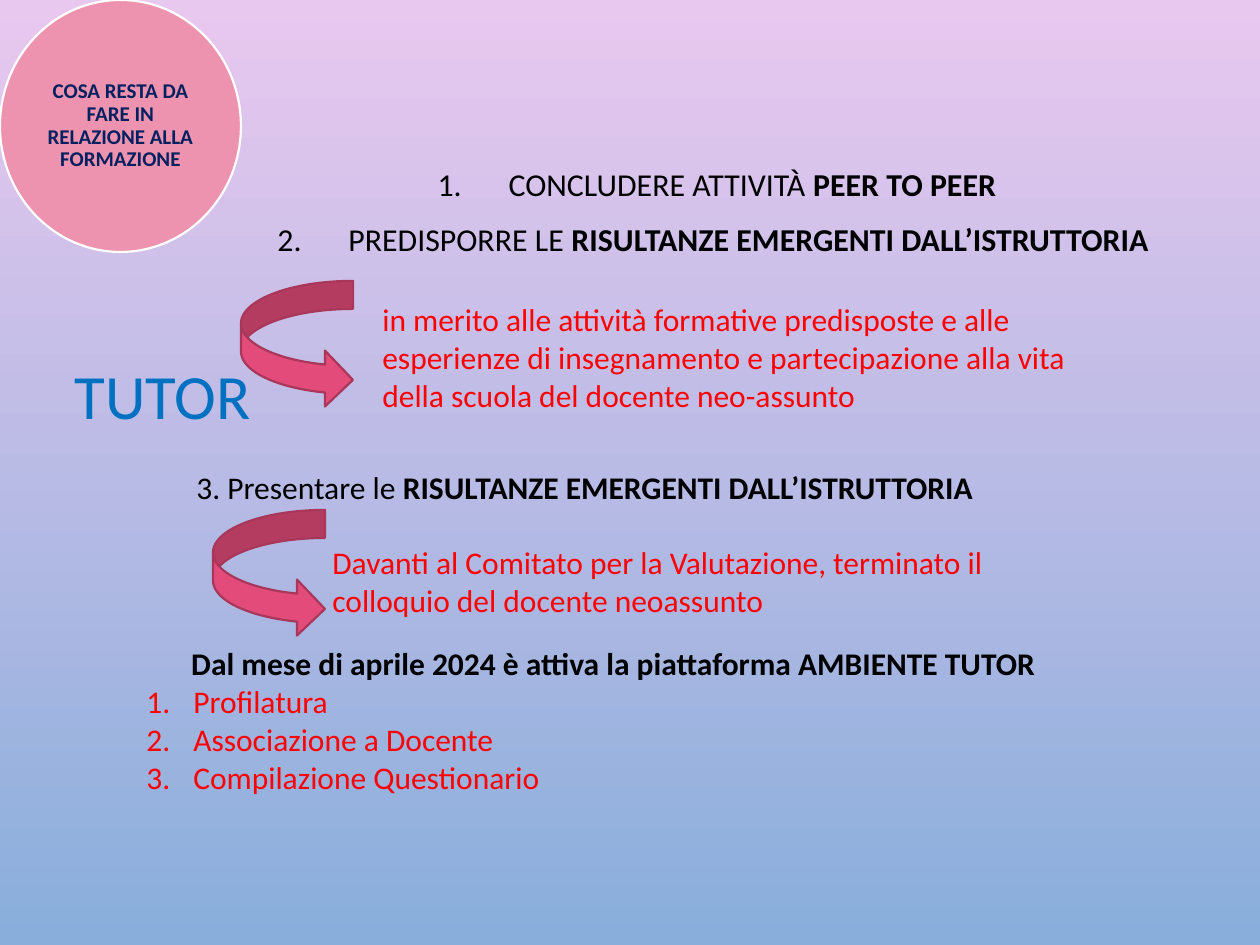
import pptx
import pptx.util
from lxml import etree
from pptx.dml.color import RGBColor
from pptx.enum.shapes import MSO_SHAPE
from pptx.enum.text import MSO_ANCHOR, PP_ALIGN
from pptx.oxml.ns import qn

PX = pptx.util.Inches(1) // 126
FONT = "Calibri"
BLACK, RED, NAVY, BLUE = "000000", "FF0000", "002060", "0070C0"


def px(length):
    return pptx.util.Emu(length * PX)


def color(hex_value):
    return RGBColor.from_string(hex_value)


def place(shape, left, top, width, height):
    shape.left, shape.top, shape.width, shape.height = map(
        px, (left, top, width, height))


def number(paragraph, margin, hanging):
    """Turn a paragraph into a numbered item with a hanging indent."""
    properties = paragraph._p.get_or_add_pPr()
    properties.set("marL", str(px(margin)))
    properties.set("indent", str(-px(hanging)))
    etree.SubElement(properties, qn("a:buFont"), typeface="+mj-lt")
    etree.SubElement(properties, qn("a:buAutoNum"), type="arabicPeriod")


def write(frame, *runs, size=18, ink=BLACK, align=PP_ALIGN.LEFT, spacing=None,
          before=0, numbering=None):
    """Add a paragraph of (text, bold) runs; the first fills the empty one."""
    first = not frame.text
    paragraph = frame.paragraphs[0] if first else frame.add_paragraph()
    paragraph.alignment = align
    if spacing:
        paragraph.line_spacing = spacing
    if before and not first:
        paragraph.space_before = pptx.util.Pt(before)
    if numbering:
        number(paragraph, *numbering)
    for text, bold in runs:
        run = paragraph.add_run()
        run.text = text
        run.font.name = FONT
        run.font.size = pptx.util.Pt(size)
        run.font.bold = bold
        run.font.color.rgb = color(ink)


def add_text_frame(slide, *box, anchor=MSO_ANCHOR.TOP):
    frame = slide.shapes.add_textbox(*map(px, box)).text_frame
    frame.word_wrap = True
    frame.vertical_anchor = anchor
    return frame


def add_shape(slide, kind, box, fill, line):
    shape = slide.shapes.add_shape(kind, *map(px, box))
    shape.shadow.inherit = False
    shape.fill.solid()
    shape.fill.fore_color.rgb = color(fill)
    shape.line.color.rgb = color(line)
    shape.line.width = pptx.util.Pt(1.25)
    return shape


def paint_background(slide, top, bottom):
    fill = slide.background.fill
    fill.gradient()
    fill.gradient_angle = 270
    for stop, hex_value, position in zip(fill.gradient_stops, (top, bottom), (0, 1)):
        stop.color.rgb = color(hex_value)
        stop.position = position


def main():
    presentation = pptx.Presentation()
    presentation.slide_width, presentation.slide_height = px(1260), px(945)
    slide = presentation.slides.add_slide(presentation.slide_layouts[5])
    paint_background(slide, "E9C8EF", "89AEDB")

    # Title
    title = slide.shapes.title
    place(title, 44, 324, 219, 116)
    title.text_frame.vertical_anchor = MSO_ANCHOR.BOTTOM
    write(title.text_frame, ("TUTOR", False), size=36, ink=BLUE,
          align=PP_ALIGN.RIGHT, spacing=0.9)

    # Numbered tasks
    tasks = add_text_frame(slide, 205, 123, 1021, 142, anchor=MSO_ANCHOR.BOTTOM)
    for lead, emphasis in (
            ("CONCLUDERE ATTIVITÀ ", "PEER TO PEER"),
            ("PREDISPORRE LE ", "RISULTANZE EMERGENTI DALL’ISTRUTTORIA ")):
        write(tasks, (lead, False), (emphasis, True), size=18.2,
              align=PP_ALIGN.CENTER, spacing=0.97, before=10, numbering=(74, 71))
    presenting = add_text_frame(slide, 184, 462, 863, 50)
    write(presenting, ("3. Presentare le ", False),
          ("RISULTANZE EMERGENTI DALL’ISTRUTTORIA", True))

    # Details of the tasks
    for detail, box in (
            ("in merito alle attività formative predisposte e alle esperienze di "
             "insegnamento e partecipazione alla vita della scuola del docente "
             "neo-assunto", (370, 294, 735, 127)),
            ("Davanti al Comitato per la Valutazione, terminato il colloquio del "
             "docente neoassunto", (320, 537, 784, 89))):
        write(add_text_frame(slide, *box), (detail, False), ink=RED)

    # Topic circle
    topic = add_shape(slide, MSO_SHAPE.OVAL, (0, 0, 241, 252), "EE93AF", "FFFFFF")
    frame = topic.text_frame
    frame.word_wrap = True
    frame.vertical_anchor = MSO_ANCHOR.MIDDLE
    frame.margin_left = frame.margin_right = px(3)
    frame.margin_top = frame.margin_bottom = px(3)
    write(frame, ("COSA RESTA DA FARE IN RELAZIONE ALLA FORMAZIONE", True),
          size=12, ink=NAVY, align=PP_ALIGN.CENTER, spacing=0.9)

    # Platform steps
    platform = add_text_frame(slide, 134, 638, 959, 165)
    write(platform,
          ("Dal mese di aprile 2024 è attiva la piattaforma AMBIENTE TUTOR", True),
          align=PP_ALIGN.CENTER)
    for step in ("Profilatura", "Associazione a Docente", "Compilazione Questionario"):
        write(platform, (step, False), ink=RED, numbering=(47, 47))

    # Arrows from tasks to details
    for left, top in ((213, 510), (241, 281)):
        add_shape(slide, MSO_SHAPE.CURVED_RIGHT_ARROW, (left, top, 112, 127),
                  "E34B7A", "A8375A")

    presentation.save("out.pptx")


if __name__ == "__main__":
    main()
